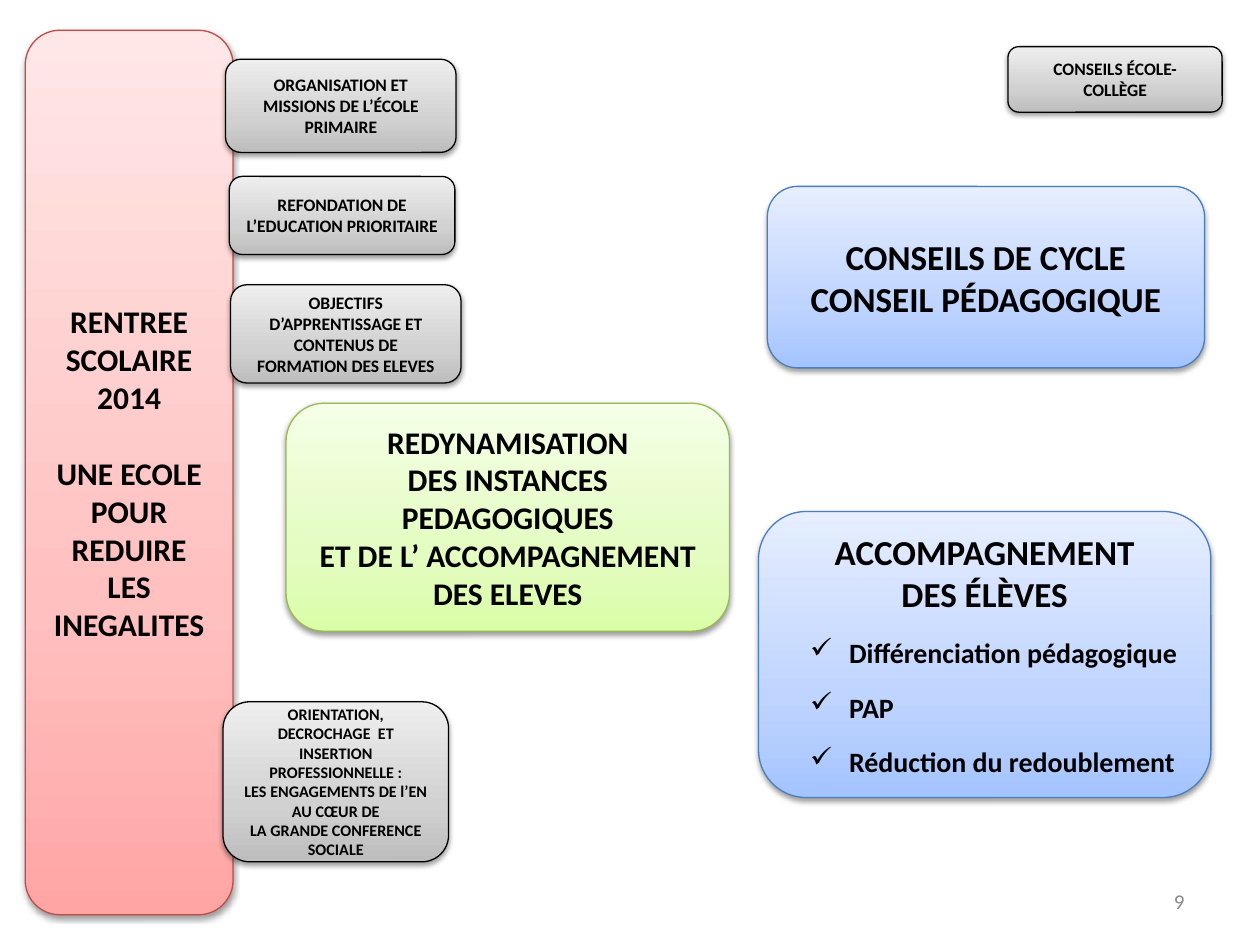
from copy import deepcopy

from lxml.etree import SubElement
from pptx import Presentation
from pptx.dml.color import RGBColor
from pptx.enum.shapes import MSO_SHAPE as Preset
from pptx.enum.text import MSO_ANCHOR as Anchor, PP_ALIGN as Align
from pptx.oxml.ns import qn
from pptx.util import Inches, Pt

BLACK = RGBColor(0x00, 0x00, 0x00)
NUMBER_GREY = RGBColor(0x89, 0x89, 0x89)
RED_LINE = RGBColor(0xBF, 0x4C, 0x48)
GREEN_LINE = RGBColor(0x98, 0xB9, 0x55)
BLUE_LINE = RGBColor(0x4B, 0x7E, 0xBC)
# Gradient colours run from the bottom of a box to its top.
RED = [RGBColor(0xFF, 0xA6, 0xA5), RGBColor(0xFF, 0xC0, 0xBF), RGBColor(0xFF, 0xE7, 0xE7)]
GREY = [RGBColor(0xBD, 0xBD, 0xBD), RGBColor(0xD1, 0xD1, 0xD1), RGBColor(0xEE, 0xEE, 0xEE)]
GREEN = [RGBColor(0xDA, 0xFD, 0xA7), RGBColor(0xE4, 0xFC, 0xC2), RGBColor(0xF5, 0xFF, 0xE7)]
BLUE = [RGBColor(0xA4, 0xC4, 0xFF), RGBColor(0xBF, 0xD4, 0xFF), RGBColor(0xE6, 0xEE, 0xFF)]

TOPICS = [
    (1.79, 0.47, 1.83, 0.74, 10, ["ORGANISATION ET MISSIONS DE L’ÉCOLE PRIMAIRE"]),
    (1.83, 2.26, 1.83, 0.78, 10, ["OBJECTIFS D’APPRENTISSAGE ET CONTENUS DE", "FORMATION DES ELEVES"]),
    (1.82, 1.4, 1.79, 0.62, 10, ["REFONDATION DE", "L’EDUCATION PRIORITAIRE"]),
    (1.77, 5.57, 1.79, 1.27, 9.2, [
        "ORIENTATION, DECROCHAGE  ET INSERTION PROFESSIONNELLE :",
        "LES ENGAGEMENTS DE l’EN", "AU CŒUR DE", "LA GRANDE CONFERENCE SOCIALE"]),
    (8, 0.37, 1.7, 0.52, 10, ["CONSEILS ÉCOLE-COLLÈGE"]),
]


class SlideBuilder:
    font = "Calibri"

    def __init__(self, slide):
        self.slide = slide

    def style(self, paragraph, size, color=BLACK, bold=True, align=Align.CENTER):
        paragraph.alignment = align
        for run in paragraph.runs:
            run.font.name = self.font
            run.font.size = Pt(size)
            run.font.bold = bold
            run.font.color.rgb = color

    def box(self, left, top, width, height, size, lines, colors=GREY, line=BLACK):
        """Add a rounded, shaded box with centred bold lines; return its text frame."""
        shape = self.slide.shapes.add_shape(
            Preset.ROUNDED_RECTANGLE, Inches(left), Inches(top), Inches(width), Inches(height))
        self.shade(shape, colors)
        shape.line.color.rgb = line
        shape.line.width = Pt(0.75)
        self.drop_shadow(shape)
        frame = shape.text_frame
        frame.word_wrap = True
        frame.vertical_anchor = Anchor.MIDDLE
        frame.text = "\n".join(lines)
        for paragraph in frame.paragraphs:
            self.style(paragraph, size)
        return frame

    def shade(self, shape, colors):
        fill = shape.fill
        fill.gradient()
        fill.gradient_angle = 90
        stop_list = shape.element.spPr.find(".//" + qn("a:gsLst"))
        stop_list.insert(1, deepcopy(stop_list[0]))
        for stop, position, color in zip(fill.gradient_stops, (0, 0.35, 1), colors):
            stop.position = position
            stop.color.rgb = color

    def drop_shadow(self, shape):
        shape.shadow.inherit = False
        effects = shape.element.spPr.find(qn("a:effectLst"))
        shadow = SubElement(effects, qn("a:outerShdw"), blurRad=str(Pt(3.1)),
                            dist=str(Pt(1.6)), dir="5400000", rotWithShape="0")
        color = SubElement(shadow, qn("a:srgbClr"), val=str(BLACK))
        SubElement(color, qn("a:alpha"), val="38000")

    def check_item(self, frame, text, size, gap):
        paragraph = frame.add_paragraph()
        paragraph.text = text
        paragraph.space_before = Pt(gap)
        self.style(paragraph, size, align=Align.LEFT)
        properties = paragraph._p.get_or_add_pPr()
        properties.set("marL", str(Inches(0.51)))
        properties.set("indent", str(Inches(-0.31)))
        SubElement(properties, qn("a:buChar"), char="✓")

    def slide_number(self, text):
        text_box = self.slide.shapes.add_textbox(
            Inches(7.17), Inches(6.95), Inches(2.33), Inches(0.4))
        frame = text_box.text_frame
        frame.word_wrap = True
        frame.vertical_anchor = Anchor.MIDDLE
        frame.text = text
        self.style(frame.paragraphs[0], 12, NUMBER_GREY, False, Align.RIGHT)


def main():
    presentation = Presentation()
    presentation.slide_width = Inches(10)
    presentation.slide_height = Inches(7.5)
    blank_layout = presentation.slide_layouts[6]
    builder = SlideBuilder(presentation.slides.add_slide(blank_layout))

    theme = builder.box(0.2, 0.24, 1.65, 7.02, 18, [
        "RENTREE SCOLAIRE 2014", "UNE ECOLE POUR REDUIRE LES INEGALITES"], RED, RED_LINE)
    theme.paragraphs[1].space_before = Pt(22)
    builder.slide_number("9")

    for topic in TOPICS:
        builder.box(*topic)

    builder.box(2.27, 3.2, 3.52, 1.81, 18, [
        "REDYNAMISATION", "DES INSTANCES PEDAGOGIQUES",
        "ET DE L’ ACCOMPAGNEMENT", "DES ELEVES"], GREEN, GREEN_LINE)
    builder.box(6.09, 1.48, 3.47, 1.44, 20, [
        "CONSEILS DE CYCLE", "CONSEIL PÉDAGOGIQUE"], BLUE, BLUE_LINE)
    support = builder.box(6.02, 4.06, 3.59, 2.27, 20, [
        "ACCOMPAGNEMENT", "DES ÉLÈVES"], BLUE, BLUE_LINE)
    for item in ("Différenciation pédagogique", "PAP", "Réduction du redoublement"):
        builder.check_item(support, item, size=16, gap=12)

    presentation.save("out.pptx")


if __name__ == "__main__":
    main()
